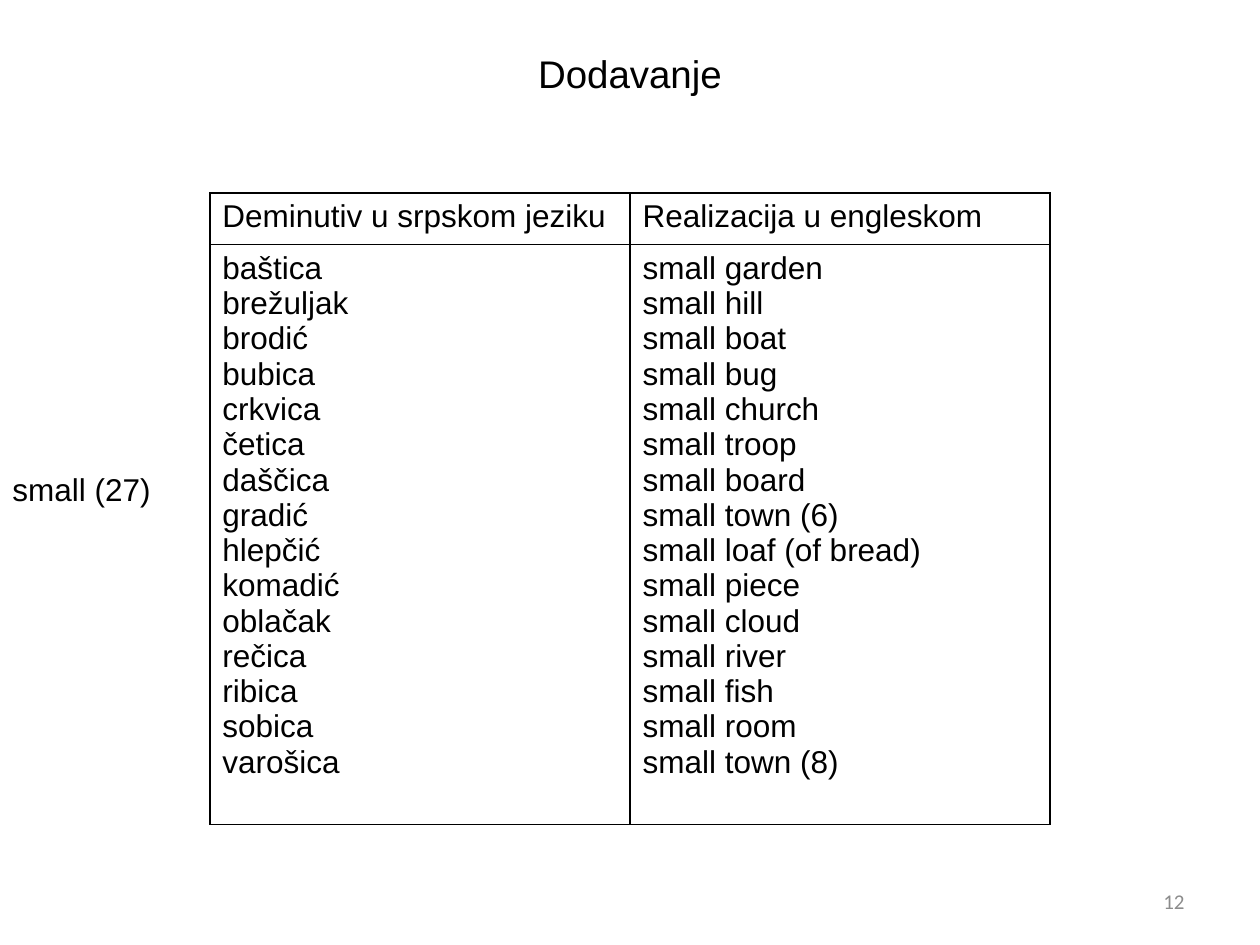
from lxml import etree
from pptx import Presentation
from pptx.dml.color import RGBColor
from pptx.enum import text
from pptx.oxml.ns import qn
from pptx.util import Cm, Pt

BLACK = "000000"
HEADERS = ("Deminutiv u srpskom jeziku", "Realizacija u engleskom")
DIMINUTIVES = [
    ("baštica", "small garden"),
    ("brežuljak", "small hill"),
    ("brodić", "small boat"),
    ("bubica", "small bug"),
    ("crkvica", "small church"),
    ("četica", "small troop"),
    ("daščica", "small board"),
    ("gradić", "small town (6)"),
    ("hlepčić", "small loaf (of bread)"),
    ("komadić", "small piece"),
    ("oblačak", "small cloud"),
    ("rečica", "small river"),
    ("ribica", "small fish"),
    ("sobica", "small room"),
    ("varošica", "small town (8)"),
]


def rgb(color):
    return RGBColor.from_string(color)


def write(tf, lines, size=18, font="Arial", color=BLACK, align=text.PP_ALIGN.LEFT):
    """Fill a text frame with one paragraph per line."""
    tf.text = "\n".join(lines)
    for p in tf.paragraphs:
        p.alignment = align
        p.font.size = Pt(size)
        p.font.name = font
        p.font.color.rgb = rgb(color)


def add_text(slide, line, left, top, width, height, **style):
    sp = slide.shapes.add_textbox(Cm(left), Cm(top), Cm(width), Cm(height))
    tf = sp.text_frame
    tf.word_wrap = True
    tf.vertical_anchor = text.MSO_ANCHOR.MIDDLE
    write(tf, [line], **style)


def add_borders(cell, color=BLACK, width=1):
    tc_pr = cell._tc.get_or_add_tcPr()
    for side in ("a:lnL", "a:lnR", "a:lnT", "a:lnB"):
        ln = etree.SubElement(tc_pr, qn(side), w=str(Pt(width)))
        fill = etree.SubElement(ln, qn("a:solidFill"))
        etree.SubElement(fill, qn("a:srgbClr"), val=color)


def add_word_table(slide):
    frame = slide.shapes.add_table(2, 2, Cm(4.23), Cm(3.89), Cm(16.94), Cm(12.73))
    table = frame.table
    table.first_row = table.horz_banding = False
    table.rows[0].height = Cm(1.04)
    table.rows[1].height = Cm(11.69)
    for col, (header, words) in enumerate(zip(HEADERS, zip(*DIMINUTIVES))):
        table.columns[col].width = Cm(8.47)
        for row, lines in enumerate(([header], words)):
            cell = table.cell(row, col)
            write(cell.text_frame, lines)
            add_borders(cell)
            cell.fill.background()


def main():
    prs = Presentation()
    prs.slide_width, prs.slide_height = Cm(25.4), Cm(19.05)
    slide = prs.slides.add_slide(prs.slide_layouts[6])
    add_text(slide, "12", 18.2, 17.66, 5.93, 1.01, size=12, font="Calibri",
             color="8C8C8C", align=text.PP_ALIGN.RIGHT)
    add_text(slide, "Dodavanje", 0, 0.84, 25.4, 1.27, size=22,
             align=text.PP_ALIGN.CENTER)
    add_text(slide, "small (27)", 0, 9.22, 4.2, 1.27)
    add_word_table(slide)
    prs.save("out.pptx")


if __name__ == "__main__":
    main()
